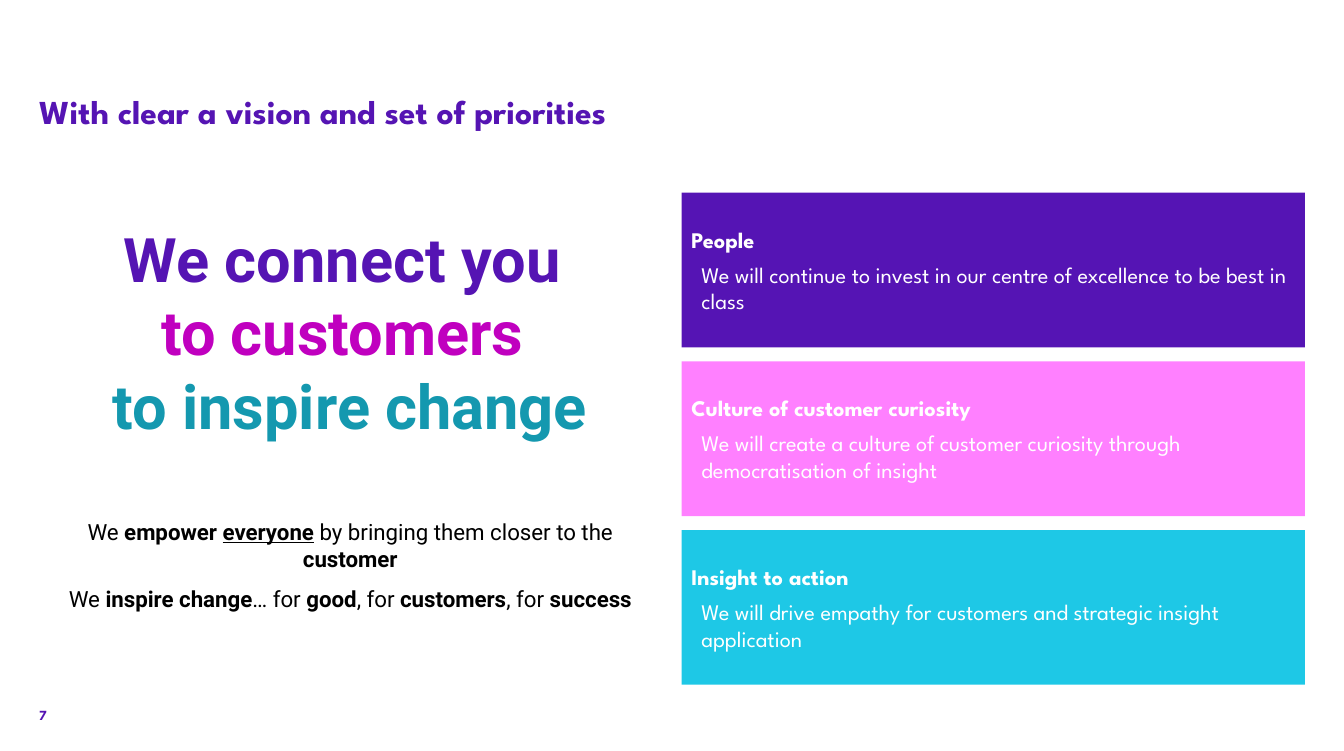
from pptx import Presentation
from pptx.dml.color import RGBColor
from pptx.enum.shapes import MSO_SHAPE
from pptx.enum.text import MSO_ANCHOR, PP_ALIGN
from pptx.util import Inches, Pt

RECTANGLE = MSO_SHAPE.RECTANGLE
TOP, MIDDLE, BOTTOM = MSO_ANCHOR.TOP, MSO_ANCHOR.MIDDLE, MSO_ANCHOR.BOTTOM
LEFT, CENTER = PP_ALIGN.LEFT, PP_ALIGN.CENTER
HEADING_FONT, BODY_FONT = "League Spartan", "Roboto"
COLORS = {
    "purple": "5514B3",
    "magenta": "C000BF",
    "teal": "1498AF",
    "black": "000000",
    "white": "FFFFFF",
    "people": "5514B4",
    "culture": "FF80FF",
    "insight": "1EC8E6",
}
VISION = [
    ("We connect you ", "purple"),
    ("to customers ", "magenta"),
    ("to inspire change", "teal"),
]
PROMISES = [
    (55, [("We ", ""), ("empower ", "b"), ("everyone", "bu"),
          (" by bringing them closer to the ", ""), ("customer", "b")]),
    (9.5, [("We ", ""), ("inspire change", "b"), ("… for ", ""), ("good", "b"),
           (", for ", ""), ("customers", "b"), (", for ", ""), ("success", "b")]),
]
PRIORITIES = [
    ("People", "people",
     "We will continue to invest in our centre of excellence to be best in class"),
    ("Culture of customer curiosity", "culture",
     "We will create a culture of customer curiosity through democratisation of insight"),
    ("Insight to action", "insight",
     "We will drive empathy for customers and strategic insight application"),
]
CARD_TOP, CARD_PITCH = 1.92, 1.68


def style_font(font, name, size, color, bold=True):
    """Set the face, size, colour and weight of a font."""
    font.name = name
    font.size = Pt(size)
    font.bold = bold
    font.color.rgb = RGBColor.from_string(COLORS[color])


def add_text_frame(page, left, top, width, height, anchor=TOP):
    """Add a wrapping text box without margins and return its frame."""
    box = page.shapes.add_textbox(Inches(left), Inches(top), Inches(width), Inches(height))
    frame = box.text_frame
    frame.word_wrap = True
    frame.vertical_anchor = anchor
    frame.margin_left = frame.margin_right = frame.margin_top = frame.margin_bottom = 0
    return frame


def add_label(page, text, size, bounds, anchor=TOP):
    """Add one purple line of heading text."""
    frame = add_text_frame(page, *bounds, anchor)
    frame.text = text
    style_font(frame.paragraphs[0].runs[0].font, HEADING_FONT, size, "purple")


def add_vision(page):
    """Add the centred vision statement and the promises below it."""
    frame = add_text_frame(page, 0.39, 2.2, 6.2, 3.94)
    frame.text = "\n".join(text for text, color in VISION)
    for para, (text, color) in zip(frame.paragraphs, VISION):
        para.alignment = CENTER
        style_font(para.runs[0].font, BODY_FONT, 44, color)
    for space, spans in PROMISES:
        para = frame.add_paragraph()
        para.alignment = CENTER
        para.space_before = Pt(space)
        for text, marks in spans:
            span = para.add_run()
            span.text = text
            style_font(span.font, BODY_FONT, 16, "black", "b" in marks)
            span.font.underline = "u" in marks


def add_priority(page, top, heading, fill, detail):
    """Add a filled card with a bold heading and an indented detail."""
    card = page.shapes.add_shape(RECTANGLE, Inches(6.79), Inches(top), Inches(6.21), Inches(1.54))
    card.shadow.inherit = False
    card.fill.solid()
    card.fill.fore_color.rgb = RGBColor.from_string(COLORS[fill])
    card.line.fill.background()
    frame = card.text_frame
    frame.word_wrap = True
    frame.vertical_anchor = MIDDLE
    frame.text = f"{heading}\n{detail}"
    for para, bold, space in zip(frame.paragraphs, (True, False), (6, 11.7)):
        para.alignment = LEFT
        para.space_after = Pt(space)
        style_font(para.runs[0].font, HEADING_FONT, 16, "white", bold)
    frame.paragraphs[1]._p.get_or_add_pPr().set("marL", str(Inches(0.1)))


def main():
    """Build the slide and save the deck."""
    deck = Presentation()
    deck.slide_width, deck.slide_height = Inches(13.39), Inches(7.48)
    page = deck.slides.add_slide(deck.slide_layouts[6])
    add_label(page, "With clear a vision and set of priorities", 24, (0.39, 0.91, 12.61, 0.87))
    add_vision(page)
    for index, priority in enumerate(PRIORITIES):
        add_priority(page, CARD_TOP + index * CARD_PITCH, *priority)
    add_label(page, "7", 10, (0.39, 6.91, 0.39, 0.29), BOTTOM)
    deck.save("out.pptx")


if __name__ == "__main__":
    main()
